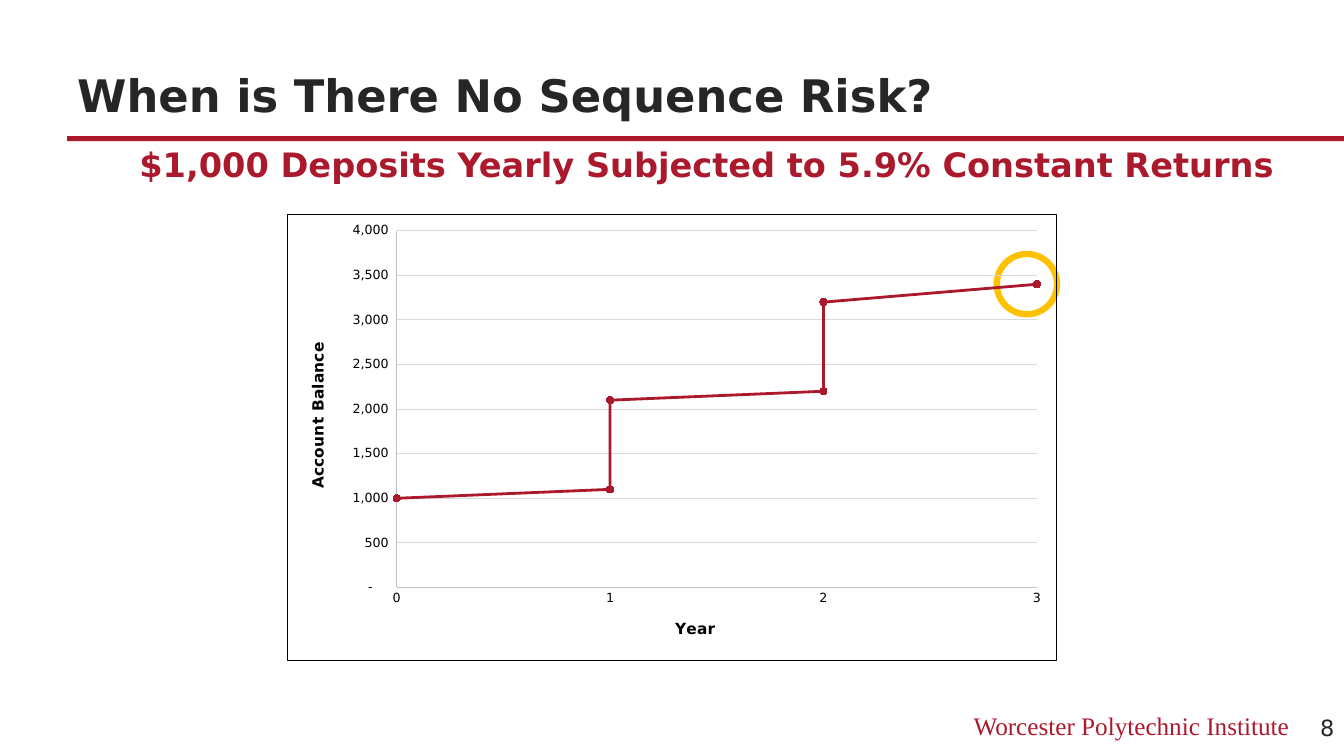
from lxml import etree
from pptx import Presentation
from pptx.chart.data import XyChartData
from pptx.dml.color import RGBColor
from pptx.enum.chart import XL_CHART_TYPE, XL_MARKER_STYLE, XL_TICK_MARK
from pptx.enum.shapes import MSO_SHAPE
from pptx.enum.text import MSO_ANCHOR, MSO_AUTO_SIZE, PP_ALIGN
from pptx.oxml import parse_xml
from pptx.oxml.ns import nsdecls, qn
from pptx.util import Cm, Pt

RED = RGBColor(0xAB, 0x19, 0x2D)
DARK = RGBColor(0x26, 0x26, 0x26)
BLACK = RGBColor(0, 0, 0)
GOLD = RGBColor(0xFF, 0xC0, 0x00)
AXIS_GRAY = RGBColor(0xBF, 0xBF, 0xBF)
GRID_GRAY = RGBColor(0xD9, 0xD9, 0xD9)
SANS = "DejaVu Sans"
SERIF = "Times New Roman"
LEFT, CENTER, RIGHT = PP_ALIGN.LEFT, PP_ALIGN.CENTER, PP_ALIGN.RIGHT
TOP, MIDDLE, BOTTOM = MSO_ANCHOR.TOP, MSO_ANCHOR.MIDDLE, MSO_ANCHOR.BOTTOM
NO_TICKS = XL_TICK_MARK.NONE
SLIDE_WIDTH, SLIDE_HEIGHT = 33.87, 19.05
BALANCES = [(0, 1000), (1, 1100), (1, 2100), (2, 2200), (2, 3200), (3, 3400)]
BALANCE_FORMAT = '_(* #,##0_);_(* (#,##0);_(* "-"??_);_(@_)'


def style_font(font, size, color, name=SANS, bold=False):
    font.size = Pt(size)
    font.name = name
    font.bold = bold
    font.color.rgb = color


def write_text(shape, text, size, color, name=SANS, bold=False, align=LEFT, anchor=TOP):
    frame = shape.text_frame
    frame.text = text
    frame.word_wrap = True
    frame.auto_size = MSO_AUTO_SIZE.NONE
    frame.vertical_anchor = anchor
    paragraph = frame.paragraphs[0]
    paragraph.alignment = align
    style_font(paragraph.runs[0].font, size, color, name, bold)


def add_text(slide, left, top, width, height, *text_style, **options):
    shape = slide.shapes.add_textbox(Cm(left), Cm(top), Cm(width), Cm(height))
    write_text(shape, *text_style, **options)
    return shape


def add_heading(slide, left, top, width):
    title = slide.shapes.title
    title.left, title.top = Cm(left), Cm(top)
    title.width, title.height = Cm(width), Cm(2.24)
    write_text(title, "When is There No Sequence Risk?", 32, DARK, bold=True, anchor=BOTTOM)

    rule = slide.shapes.add_shape(
        MSO_SHAPE.RECTANGLE, Cm(left), Cm(top + 2.48), Cm(SLIDE_WIDTH - left), Cm(0.13))
    rule.shadow.inherit = False
    rule.fill.solid()
    rule.fill.fore_color.rgb = RED
    rule.line.fill.background()

    subtitle = add_text(
        slide, left + 0.92, top + 2.63, width - 0.08, 1.2,
        "$1,000 Deposits Yearly Subjected to 5.9% Constant Returns",
        24, RED, bold=True, align=CENTER)
    subtitle.text_frame.paragraphs[0].line_spacing = 0.95


def add_highlight(slide, left, top, diameter):
    ring = slide.shapes.add_shape(
        MSO_SHAPE.OVAL, Cm(left), Cm(top), Cm(diameter), Cm(diameter))
    ring.shadow.inherit = False
    ring.fill.background()
    ring.line.color.rgb = GOLD
    ring.line.width = Pt(4.5)


def manual_layout(inner=False, **fractions):
    """Build a chart layout from fractions of the chart's size."""
    layout = parse_xml(f"<c:layout {nsdecls('c')}><c:manualLayout/></c:layout>")
    settings = {"layoutTarget": "inner"} if inner else {}
    settings.update(xMode="edge", yMode="edge", **fractions)
    for tag, value in settings.items():
        etree.SubElement(layout[0], qn(f"c:{tag}")).set("val", str(value))
    return layout


def format_axis(axis, title, title_x, title_y, maximum, step):
    axis.minimum_scale, axis.maximum_scale, axis.major_unit = 0, maximum, step
    axis.major_tick_mark = axis.minor_tick_mark = NO_TICKS
    style_font(axis.tick_labels.font, 9, BLACK)
    axis.format.line.color.rgb = AXIS_GRAY
    axis.format.line.width = Pt(0.75)
    frame = axis.axis_title.text_frame
    frame.text = title
    style_font(frame.paragraphs[0].runs[0].font, 11, BLACK, bold=True)
    element = axis.axis_title._element
    for layout in element.findall(qn("c:layout")):
        element.remove(layout)
    element.find(qn("c:tx")).addnext(manual_layout(x=title_x, y=title_y))


def frame_chart(chart):
    """Give the chart area a thin black border and no fill."""
    border = parse_xml(
        f'<c:spPr {nsdecls("c", "a")}><a:noFill/><a:ln w="9525"><a:solidFill>'
        f'<a:srgbClr val="{BLACK}"/></a:solidFill></a:ln></c:spPr>')
    chart._chartSpace.find(qn("c:chart")).addnext(border)


def add_balance_chart(slide, left, top, width, height):
    data = XyChartData()
    series_data = data.add_series("Series 1")
    for year, balance in BALANCES:
        series_data.add_data_point(year, balance)
    chart = slide.shapes.add_chart(
        XL_CHART_TYPE.XY_SCATTER_LINES, Cm(left), Cm(top), Cm(width), Cm(height), data).chart
    chart.has_legend = False
    chart.has_title = False
    style_font(chart.font, 10, BLACK)
    frame_chart(chart)

    plot_area = chart._chartSpace.find(qn("c:chart")).find(qn("c:plotArea"))
    for layout in plot_area.findall(qn("c:layout")):
        plot_area.remove(layout)
    plot_area.insert(0, manual_layout(inner=True, x=0.142, y=0.036, w=0.832, h=0.801))

    years, balances = chart.category_axis, chart.value_axis
    format_axis(years, "Year", 0.5, 0.9, 3, 1)
    format_axis(balances, "Account Balance", 0.022, 0.28, 4000, 500)
    years.has_major_gridlines = False
    balances.major_gridlines.format.line.color.rgb = GRID_GRAY
    balances.major_gridlines.format.line.width = Pt(0.75)
    balances.tick_labels.number_format = BALANCE_FORMAT
    balances.tick_labels.number_format_is_linked = False

    chart.plots[0].vary_by_categories = False
    series = chart.plots[0].series[0]
    series.smooth = False
    series.format.line.color.rgb = RED
    series.format.line.width = Pt(2)
    series.marker.style = XL_MARKER_STYLE.CIRCLE
    series.marker.size = 5
    series.marker.format.fill.solid()
    series.marker.format.fill.fore_color.rgb = RED
    series.marker.format.line.color.rgb = RED


def add_footer(slide, top):
    add_text(slide, 20.32, top, 12.42, 1.02, "Worcester Polytechnic Institute",
             18, RED, name=SERIF, align=RIGHT)
    number = add_text(slide, 33.02, top, 0.85, 1.09, "8", 16, DARK, anchor=MIDDLE)
    number.text_frame.margin_right = 0


def main():
    presentation = Presentation()
    presentation.slide_width, presentation.slide_height = Cm(SLIDE_WIDTH), Cm(SLIDE_HEIGHT)
    title_only = presentation.slide_layouts[5]
    slide = presentation.slides.add_slide(title_only)
    add_heading(slide, 1.69, 0.95, 30.48)
    add_highlight(slide, 25.12, 6.4, 1.52)
    add_balance_chart(slide, 7.23, 5.4, 19.42, 11.25)
    add_footer(slide, 17.78)
    presentation.save("out.pptx")


if __name__ == "__main__":
    main()
